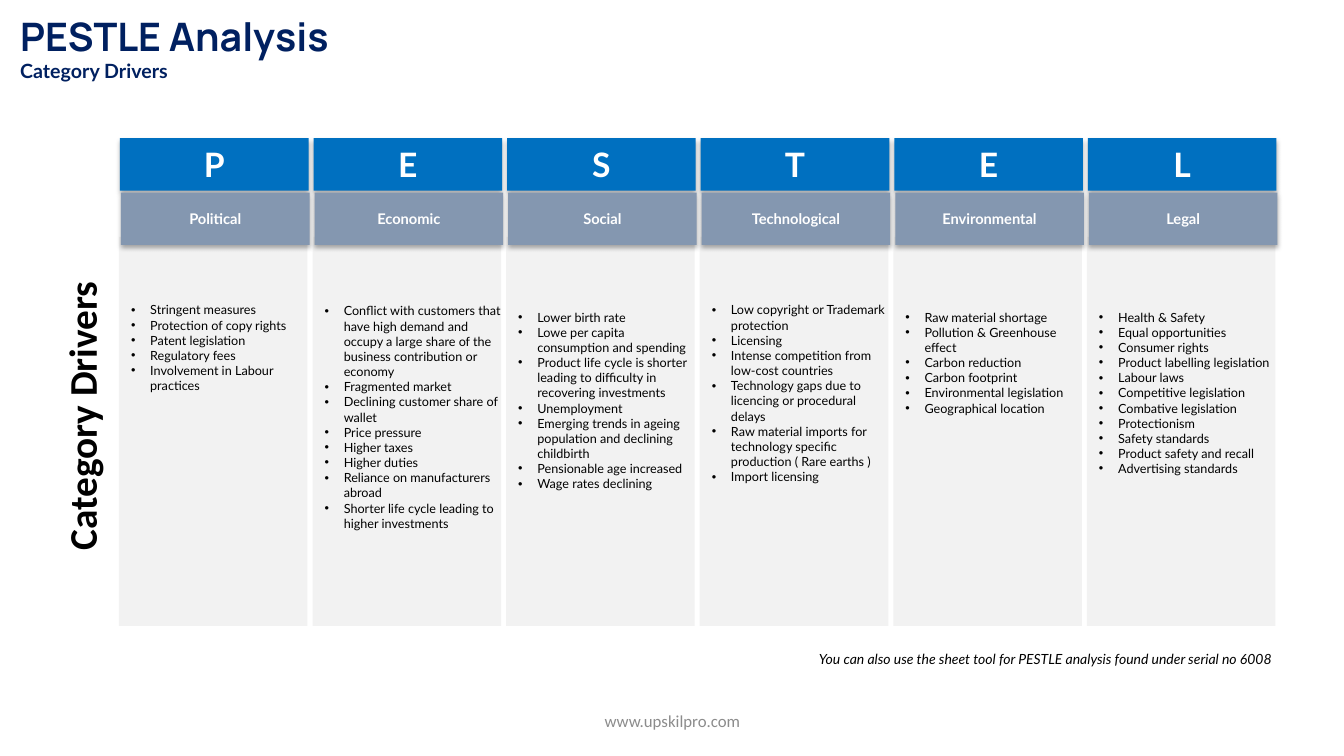
from dataclasses import dataclass

import lxml.etree
import pptx
import pptx.dml.color
import pptx.enum.shapes
import pptx.enum.text
import pptx.oxml.ns
import pptx.util

Inches = pptx.util.Inches
Align = pptx.enum.text.PP_ALIGN
Anchor = pptx.enum.text.MSO_ANCHOR


@dataclass(frozen=True)
class Theme:
    navy: str = "002060"
    blue: str = "0070C0"
    slate: str = "8497B0"
    panel: str = "F2F2F2"
    white: str = "FFFFFF"
    black: str = "000000"
    grey: str = "8C8C8C"
    heading: str = "Manrope"
    body: str = "Lato"
    plain: str = "Calibri"
    title_size: float = 28
    letter_size: float = 24
    subtitle_size: float = 14
    footer_size: float = 12
    label_size: float = 10.5
    note_size: float = 10
    list_size: float = 9


theme = Theme()
columns = [
    ("P", "Political", 0.65, [
        "Stringent measures", "Protection of copy rights", "Patent legislation",
        "Regulatory fees", "Involvement in Labour practices"]),
    ("E", "Economic", 0.66, [
        "Conflict with customers that have high demand and occupy a large share "
        "of the business contribution or economy",
        "Fragmented market", "Declining customer share of wallet",
        "Price pressure", "Higher taxes", "Higher duties",
        "Reliance on manufacturers abroad",
        "Shorter life cycle leading to higher investments"]),
    ("S", "Social", 0.72, [
        "Lower birth rate", "Lowe per capita consumption and spending",
        "Product life cycle is shorter leading to difficulty in recovering investments",
        "Unemployment",
        "Emerging trends in ageing population and declining childbirth",
        "Pensionable age increased", "Wage rates declining"]),
    ("T", "Technological", 0.65, [
        "Low copyright or Trademark protection", "Licensing",
        "Intense competition from low-cost countries",
        "Technology gaps due to licencing or procedural delays",
        "Raw material imports for technology specific production ( Rare earths )",
        "Import licensing"]),
    ("E", "Environmental", 0.72, [
        "Raw material shortage", "Pollution & Greenhouse effect",
        "Carbon reduction", "Carbon footprint", "Environmental legislation",
        "Geographical location"]),
    ("L", "Legal", 0.72, [
        "Health & Safety", "Equal opportunities", "Consumer rights",
        "Product labelling legislation", "Labour laws",
        "Competitive legislation", "Combative legislation", "Protectionism",
        "Safety standards", "Product safety and recall",
        "Advertising standards"]),
]


def write(para, text, font, size, color, align=Align.LEFT, bold=False, italic=False):
    para.text = text
    para.alignment = align
    para.font.name = font
    para.font.size = pptx.util.Pt(size)
    para.font.color.rgb = pptx.dml.color.RGBColor.from_string(color)
    para.font.bold = bold
    para.font.italic = italic


def add_card(left, top, height, color, shadow):
    card = page.shapes.add_shape(
        pptx.enum.shapes.MSO_SHAPE.ROUNDED_RECTANGLE,
        Inches(left), Inches(top), Inches(1.87), Inches(height))
    card.adjustments[0] = 0
    card.fill.solid()
    card.fill.fore_color.rgb = pptx.dml.color.RGBColor.from_string(color)
    card.line.fill.background()
    card.shadow.inherit = False
    if shadow:
        effects = card._element.spPr.find(pptx.oxml.ns.qn("a:effectLst"))
        outer = lxml.etree.SubElement(
            effects, pptx.oxml.ns.qn("a:outerShdw"), blurRad="44450", dist="27940",
            dir="5400000", algn="ctr", rotWithShape="0")
        tint = lxml.etree.SubElement(outer, pptx.oxml.ns.qn("a:srgbClr"), val=theme.black)
        lxml.etree.SubElement(tint, pptx.oxml.ns.qn("a:alpha"), val="32000")
    card.text_frame.word_wrap = True
    card.text_frame.vertical_anchor = Anchor.MIDDLE
    return card.text_frame


deck = pptx.Presentation()
deck.slide_width = Inches(13.33)
deck.slide_height = Inches(7.5)
page = deck.slides.add_slide(deck.slide_layouts[5])

title = page.shapes.title
title.left, title.top = Inches(0.1), Inches(0.07)
title.width, title.height = Inches(10.53), Inches(0.81)
frame = title.text_frame
frame.word_wrap = True
frame.auto_size = pptx.enum.text.MSO_AUTO_SIZE.NONE
frame.vertical_anchor = Anchor.TOP
write(frame.paragraphs[0], "PESTLE Analysis", theme.heading, theme.title_size,
      theme.navy, bold=True)
write(frame.add_paragraph(), "Category Drivers", theme.body, theme.subtitle_size,
      theme.navy, bold=True)

for index, (letter, name, list_top, drivers) in enumerate(columns):
    left = 1.19 + 1.92 * index
    frame = add_card(left, 1.37, 0.52, theme.blue, True)
    write(frame.paragraphs[0], letter, theme.body, theme.letter_size, theme.white,
          Align.CENTER, bold=True)

    frame = add_card(left - 0.01, 2.35, 3.86, theme.panel, False)
    frame.vertical_anchor = Anchor.TOP
    frame.margin_left, frame.margin_top = Inches(0.12), Inches(list_top)
    frame.margin_right = frame.margin_bottom = 0
    for row, driver in enumerate(drivers):
        para = frame.add_paragraph() if row else frame.paragraphs[0]
        layout = para._p.get_or_add_pPr()
        layout.set("marL", str(Inches(0.19)))
        layout.set("indent", str(-Inches(0.19)))
        lxml.etree.SubElement(layout, pptx.oxml.ns.qn("a:buFont"), typeface="Arial")
        lxml.etree.SubElement(layout, pptx.oxml.ns.qn("a:buChar"), char="•")
        write(para, driver, theme.body, theme.list_size, theme.black)

    frame = add_card(left + 0.01, 1.91, 0.52, theme.slate, True)
    write(frame.paragraphs[0], name, theme.body, theme.label_size, theme.white,
          Align.CENTER, bold=True)

side = page.shapes.add_textbox(Inches(-0.57), Inches(3.81), Inches(2.89), Inches(0.6))
side.rotation = 270
side.text_frame.word_wrap = True
side.text_frame.paragraphs[0].line_spacing = 0.9
write(side.text_frame.paragraphs[0], "Category Drivers", theme.plain, theme.title_size,
      theme.black, bold=True)

footer = page.shapes.add_textbox(Inches(4.42), Inches(6.95), Inches(4.5), Inches(0.4))
footer.text_frame.word_wrap = True
footer.text_frame.vertical_anchor = Anchor.MIDDLE
write(footer.text_frame.paragraphs[0], "www.upskilpro.com", theme.plain,
      theme.footer_size, theme.grey, Align.CENTER)

note = page.shapes.add_textbox(Inches(7.08), Inches(6.4), Inches(5.63), Inches(0.27))
note.text_frame.word_wrap = True
write(note.text_frame.paragraphs[0],
      "You can also use the sheet tool for PESTLE analysis found under serial no 6008",
      theme.body, theme.note_size, theme.black, Align.RIGHT, italic=True)

deck.save("out.pptx")
